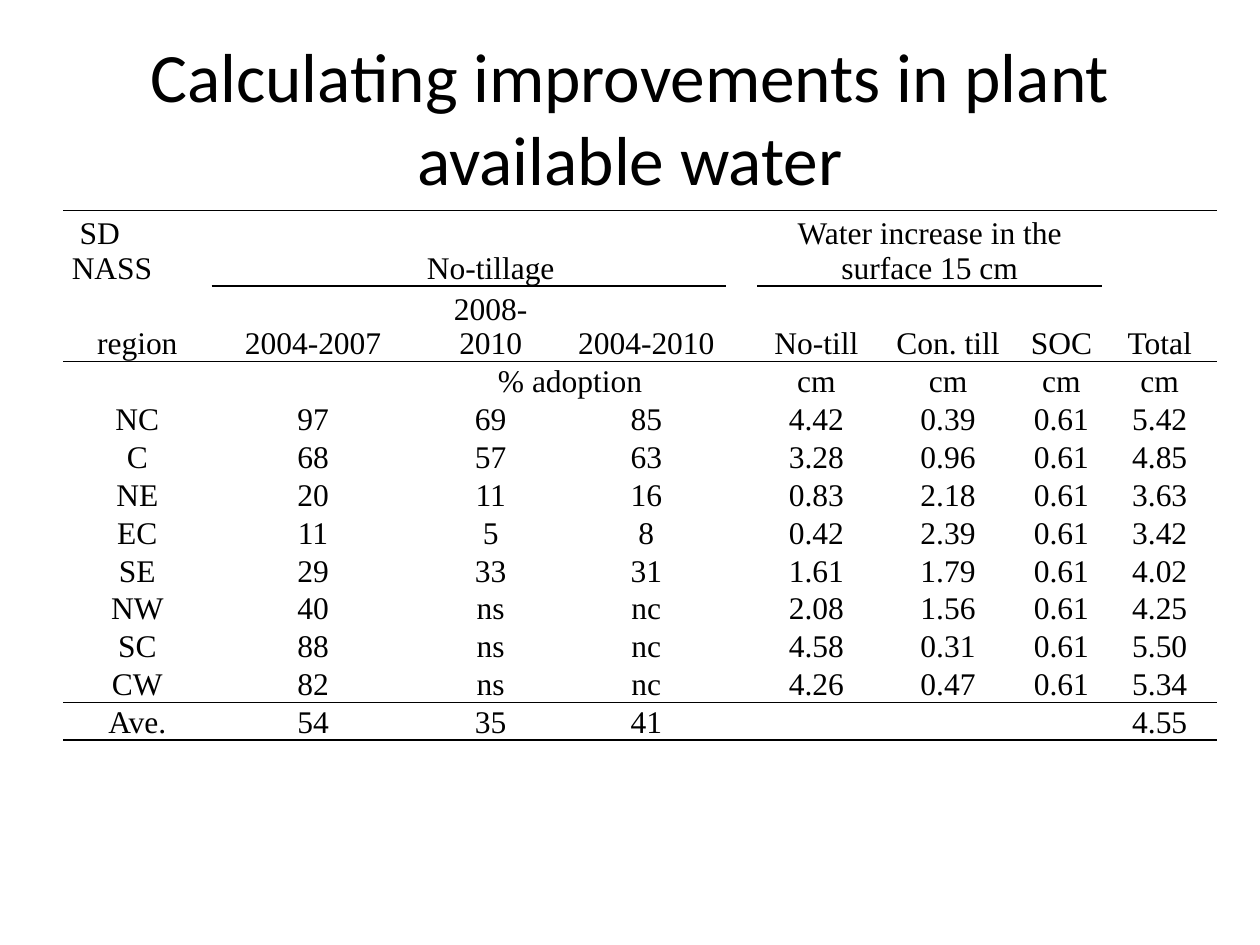
from dataclasses import dataclass

from lxml import etree
from pptx import Presentation
from pptx import util as u
from pptx.dml.color import RGBColor
from pptx.enum import text
from pptx.oxml import ns


@dataclass(frozen=True)
class Theme:
    ink: str = "000000"
    title_font: str = "Calibri"
    table_font: str = "Times New Roman"
    title_size: float = 39.6
    table_size: float = 18
    rule_width: float = 1


@dataclass(frozen=True)
class Span:
    row: int
    first: int
    last: int


THEME = Theme()
WIDTHS = (1.18, 1.61, 1.21, 1.26, 0.25, 0.94, 1.15, 0.65, 0.91)
HEIGHTS = (0.58, 0.56) + (0.3,) * 10
ROWS = (
    (" SD NASS", "", "No-tillage", "", "", "Water increase in the surface 15 cm", "", "", ""),
    ("region", "2004-2007", "2008-2010", "2004-2010", "", "No-till", "Con. till", "SOC", "Total"),
    ("", "", "% adoption", "", "", "cm", "cm", "cm", "cm"),
    ("NC", "97", "69", "85", "", "4.42", "0.39", "0.61", "5.42"),
    ("C", "68", "57", "63", "", "3.28", "0.96", "0.61", "4.85"),
    ("NE", "20", "11", "16", "", "0.83", "2.18", "0.61", "3.63"),
    ("EC", "11", "5", "8", "", "0.42", "2.39", "0.61", "3.42"),
    ("SE", "29", "33", "31", "", "1.61", "1.79", "0.61", "4.02"),
    ("NW", "40", "ns", "nc", "", "2.08", "1.56", "0.61", "4.25"),
    ("SC", "88", "ns", "nc", "", "4.58", "0.31", "0.61", "5.50"),
    ("CW", "82", "ns", "nc", "", "4.26", "0.47", "0.61", "5.34"),
    ("Ave.", "54", "35", "41", "", "", "", "", "4.55"),
)
MERGES = (Span(0, 5, 7), Span(2, 2, 3))
RULES = (Span(0, 0, 8), Span(1, 1, 3), Span(1, 5, 7), Span(2, 0, 8), Span(11, 0, 8), Span(12, 0, 8))


def write(para, words: str, *, font: str, size: float, align=text.PP_ALIGN.CENTER) -> None:
    para.alignment = align
    span = para.add_run()
    span.text = words
    span.font.name = font
    span.font.size = u.Pt(size)
    span.font.color.rgb = RGBColor.from_string(THEME.ink)


def has_rule(line: int, column: int) -> bool:
    return any(rule.row == line and rule.first <= column <= rule.last for rule in RULES)


def set_borders(cell, top: bool, bottom: bool) -> None:
    properties = cell._tc.get_or_add_tcPr()
    sides = {"a:lnL": False, "a:lnR": False, "a:lnT": top, "a:lnB": bottom}
    for tag, shown in sides.items():
        line = etree.SubElement(properties, ns.qn(tag), w=str(u.Pt(THEME.rule_width)))
        if shown:
            fill = etree.SubElement(line, ns.qn("a:solidFill"))
            etree.SubElement(fill, ns.qn("a:srgbClr"), val=THEME.ink)
        else:
            etree.SubElement(line, ns.qn("a:noFill"))


def add_title(page, words: str) -> None:
    box = page.shapes.add_textbox(u.Inches(0.5), u.Inches(0.3), u.Inches(9), u.Inches(1.25))
    frame = box.text_frame
    frame.word_wrap = True
    frame.vertical_anchor = text.MSO_ANCHOR.MIDDLE
    write(frame.paragraphs[0], words, font=THEME.title_font, size=THEME.title_size)


def add_water_table(page) -> None:
    frame = page.shapes.add_table(
        len(ROWS), len(WIDTHS), u.Inches(0.5), u.Inches(1.67),
        u.Inches(sum(WIDTHS)), u.Inches(sum(HEIGHTS)),
    )
    table = frame.table
    table.first_row = table.horz_banding = False
    for column, width in zip(table.columns, WIDTHS):
        column.width = u.Inches(width)
    for row, height in zip(table.rows, HEIGHTS):
        row.height = u.Inches(height)
    for merge in MERGES:
        table.cell(merge.row, merge.first).merge(table.cell(merge.row, merge.last))
    for r, row in enumerate(ROWS):
        for c, words in enumerate(row):
            cell = table.cell(r, c)
            cell.margin_left = cell.margin_right = u.Inches(0.07)
            cell.margin_top = cell.margin_bottom = 0
            cell.vertical_anchor = text.MSO_ANCHOR.BOTTOM
            set_borders(cell, has_rule(r, c), has_rule(r + 1, c))
            cell.fill.background()
            if words:
                align = text.PP_ALIGN.LEFT if r == c == 0 else text.PP_ALIGN.CENTER
                write(cell.text_frame.paragraphs[0], words, font=THEME.table_font,
                      size=THEME.table_size, align=align)


def main() -> None:
    deck = Presentation()
    deck.slide_width, deck.slide_height = u.Inches(10), u.Inches(7.5)
    page = deck.slides.add_slide(deck.slide_layouts[6])
    add_title(page, "Calculating improvements in plant available water")
    add_water_table(page)
    deck.save("out.pptx")


if __name__ == "__main__":
    main()
